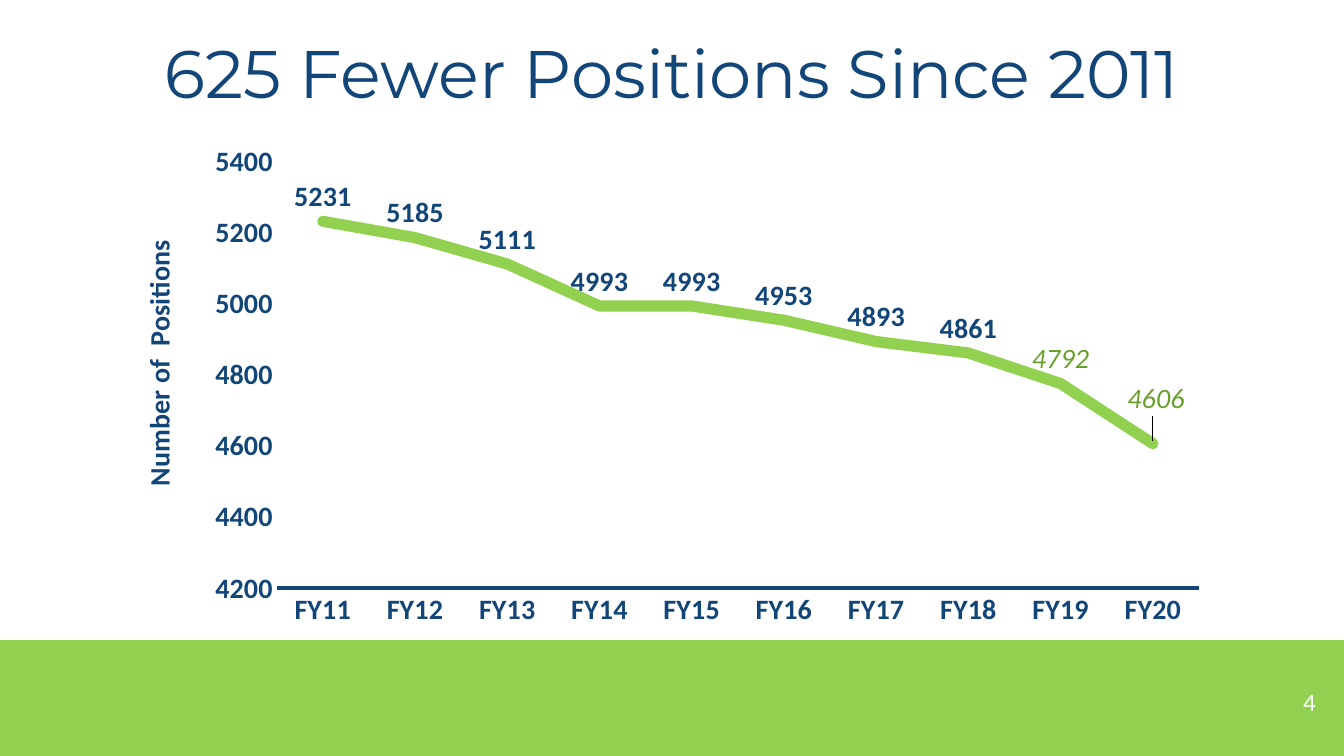
from pptx import Presentation
from pptx.chart.data import CategoryChartData
from pptx.dml.color import RGBColor
from pptx.enum.chart import XL_CHART_TYPE as ChartType, XL_LABEL_POSITION as LabelPosition, XL_TICK_MARK as TickMark
from pptx.enum.shapes import MSO_SHAPE as Preset
from pptx.enum.text import MSO_ANCHOR as Anchor, PP_ALIGN as Align
from pptx.oxml import parse_xml
from pptx.oxml.ns import nsdecls
from pptx.util import Inches, Pt

NAVY = RGBColor(0x12, 0x46, 0x79)
GREEN = RGBColor(0x92, 0xD0, 0x50)
DARK_GREEN = RGBColor(0x69, 0xA0, 0x2B)
WHITE = RGBColor(0xFF, 0xFF, 0xFF)

YEARS = [f"FY{year}" for year in range(11, 21)]
POSITIONS = [5231, 5185, 5111, 4993, 4993, 4953, 4893, 4861, 4775, 4606]
PROJECTED_LABELS = {8: "4792", 9: "4606"}
CHART_FONT = {"name": "Calibri", "size": Pt(20), "bold": True, "color": NAVY}
PROJECTED_FONT = {**CHART_FONT, "bold": False, "italic": True, "color": DARK_GREEN}


def format_font(font, values):
    for name, value in values.items():
        if name == "color":
            font.color.rgb = value
        else:
            setattr(font, name, value)


def add_band(slide, box, color):
    shape = slide.shapes.add_shape(Preset.RECTANGLE, *map(Inches, box))
    shape.shadow.inherit = False
    shape.fill.solid()
    shape.fill.fore_color.rgb = color
    shape.line.fill.background()


def add_text(slide, box, text, font, alignment, anchor):
    frame = slide.shapes.add_textbox(*map(Inches, box)).text_frame
    frame.word_wrap = True
    frame.vertical_anchor = anchor
    paragraph = frame.paragraphs[0]
    paragraph.alignment = alignment
    run = paragraph.add_run()
    run.text = text
    format_font(run.font, font)


def manual_layout(target="", mode="", **sizes):
    parts = f'<c:layoutTarget val="{target}"/>' if target else ""
    if mode:
        parts += f'<c:xMode val="{mode}"/><c:yMode val="{mode}"/>'
    parts += "".join(f'<c:{name} val="{value}"/>' for name, value in sizes.items())
    return parse_xml(f'<c:layout {nsdecls("c")}><c:manualLayout>{parts}</c:manualLayout></c:layout>')


def replace_layout(element, layout, position):
    for old_layout in element.xpath("c:layout"):
        element.remove(old_layout)
    element.insert(position, layout)


def format_axes(chart):
    years, counts = chart.category_axis, chart.value_axis
    for axis in (years, counts):
        axis.major_tick_mark = axis.minor_tick_mark = TickMark.NONE
        axis.has_major_gridlines = False
        format_font(axis.tick_labels.font, CHART_FONT)
    years.format.line.color.rgb = NAVY
    years.format.line.width = Pt(3)
    counts.format.line.fill.background()
    counts.minimum_scale, counts.maximum_scale, counts.major_unit = 4200, 5400, 200
    title = counts.axis_title
    paragraph = title.text_frame.paragraphs[0]
    run = paragraph.add_run()
    run.text = "Number of  Positions"
    format_font(run.font, CHART_FONT)
    body = title.text_frame._txBody.bodyPr
    body.set("rot", "-5400000")
    body.set("vert", "horz")
    replace_layout(title._element, manual_layout(mode="edge", x=0.01, y=0.2), 1)


def format_series(series):
    series.smooth = False
    line = series.format.line
    line.color.rgb = GREEN
    line.width = Pt(8)
    series._element.spPr.ln.set("cap", "rnd")
    series.marker.style = None
    labels = series.data_labels
    labels.show_value = True
    labels.position = LabelPosition.ABOVE
    format_font(labels.font, CHART_FONT)
    for index, text in PROJECTED_LABELS.items():
        label = series.points[index].data_label
        run = label.text_frame.paragraphs[0].add_run()
        run.text = text
        format_font(run.font, PROJECTED_FONT)
        label.position = LabelPosition.ABOVE
    last_label = series._element.xpath("c:dLbls/c:dLbl")[-1]
    replace_layout(last_label, manual_layout(x=0.003, y=-0.04), 1)


def add_positions_chart(slide, box):
    data = CategoryChartData()
    data.categories = YEARS
    data.add_series("Series 1", POSITIONS)
    chart = slide.shapes.add_chart(ChartType.LINE, *map(Inches, box), data).chart
    chart.has_legend = chart.has_title = False
    format_font(chart.font, CHART_FONT)
    plot = chart.plots[0]
    plot.vary_by_categories = False
    format_axes(chart)
    format_series(plot.series[0])
    layout = manual_layout("inner", "edge", x=0.14, y=0.054, w=0.84, h=0.849)
    replace_layout(chart._chartSpace.chart.plotArea, layout, 0)


def main():
    presentation = Presentation()
    presentation.slide_width = Inches(13.33)
    presentation.slide_height = Inches(7.5)
    slide = presentation.slides.add_slide(presentation.slide_layouts[6])
    add_band(slide, (0, 6.35, 13.33, 1.2), GREEN)
    add_text(slide, (1.4, 0.26, 10.53, 0.91), "625 Fewer Positions Since 2011",
             {"name": "Montserrat", "size": Pt(48), "color": NAVY}, Align.CENTER, Anchor.TOP)
    add_positions_chart(slide, (1.22, 1.33, 10.89, 4.99))
    add_text(slide, (10.15, 6.76, 3, 0.4), "4",
             {"name": "Calibri", "size": Pt(18), "color": WHITE}, Align.RIGHT, Anchor.MIDDLE)
    presentation.save("out.pptx")


if __name__ == "__main__":
    main()
